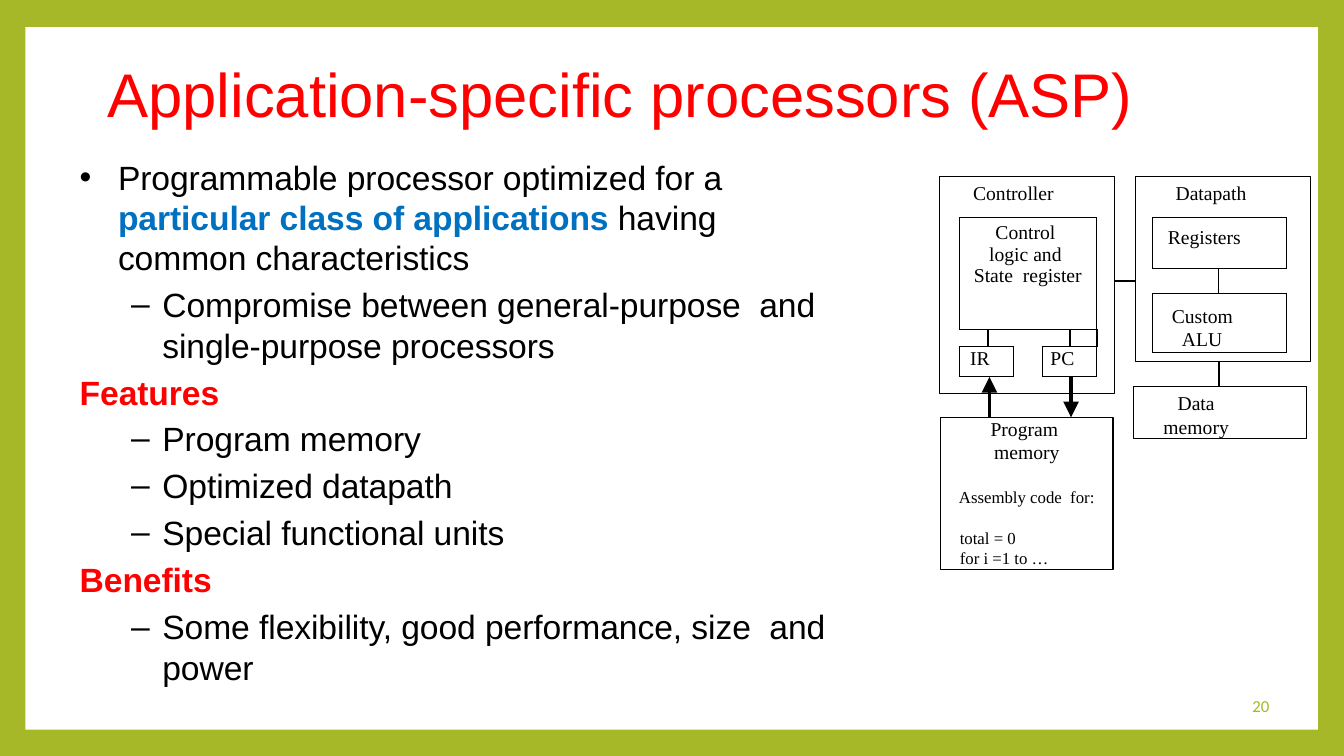
from dataclasses import dataclass

from lxml import etree
from pptx import Presentation
from pptx.dml.color import RGBColor
from pptx.enum.shapes import MSO_CONNECTOR, MSO_SHAPE
from pptx.enum.text import MSO_ANCHOR, PP_ALIGN
from pptx.oxml.ns import qn
from pptx.util import Inches, Pt

RECTANGLE = MSO_SHAPE.RECTANGLE
STRAIGHT = MSO_CONNECTOR.STRAIGHT
TOP, MIDDLE = MSO_ANCHOR.TOP, MSO_ANCHOR.MIDDLE
LEFT, CENTER, RIGHT = PP_ALIGN.LEFT, PP_ALIGN.CENTER, PP_ALIGN.RIGHT
SLIDE_WIDTH, SLIDE_HEIGHT = Inches(13.33), Inches(7.5)
EDGES = {"L": "a:lnL", "R": "a:lnR", "T": "a:lnT", "B": "a:lnB"}


@dataclass(frozen=True)
class Style:
    font: str
    size: float
    color: str = "000000"
    bold: bool = False
    tracking: int = -5


@dataclass(frozen=True)
class Theme:
    frame: str = "A6B727"
    panel: str = "FFFFFF"
    ink: str = "000000"
    thin: float = 0.75
    thick: float = 1.5
    arrow: float = 2.25
    title: Style = Style("Arial", 44, "FF0000")
    body: Style = Style("Arial", 24)
    emphasis: Style = Style("Arial", 24, "0070C0", True)
    heading: Style = Style("Arial", 24, "FF0000", True)
    diagram: Style = Style("Times New Roman", 14, tracking=0)
    code: Style = Style("Times New Roman", 12, tracking=0)
    wiring: Style = Style("Times New Roman", 6)
    number: Style = Style("Calibri", 12, "A6B727")


THEME = Theme()


@dataclass(frozen=True)
class Line:
    runs: tuple
    indent: float = 0
    first: float = 0
    before: float = 0
    spacing: object = None
    align: object = LEFT
    bullet: str = ""


@dataclass(frozen=True)
class Cell:
    start: int
    end: int
    edges: str
    line: object = None
    inset: float = 0
    upright: float = THEME.thin


def across(share):
    return round(SLIDE_WIDTH * share / 100)


def down(share):
    return round(SLIDE_HEIGHT * share / 100)


def place(left, top, width, height):
    return across(left), down(top), across(width), down(height)


def plain(text, style, **options):
    return Line(((text, style),), **options)


def add_run(paragraph, text, style):
    run = paragraph.add_run()
    run.text = text
    run.font.name = style.font
    run.font.size = Pt(style.size)
    run.font.bold = style.bold
    run.font.color.rgb = RGBColor.from_string(style.color)
    run.font._element.set("spc", str(style.tracking))


def write_paragraph(paragraph, line):
    paragraph.alignment = line.align
    paragraph.space_before = Pt(line.before)
    if line.spacing:
        paragraph.line_spacing = line.spacing
    properties = paragraph._p.get_or_add_pPr()
    properties.set("marL", str(across(line.indent)))
    properties.set("indent", str(across(line.first)))
    if line.bullet:
        etree.SubElement(properties, qn("a:buFont"), typeface="Arial")
        etree.SubElement(properties, qn("a:buChar"), char=line.bullet)
    for text, style in line.runs:
        for index, part in enumerate(text.split("\n")):
            if index:
                paragraph.add_line_break()
            add_run(paragraph, part, style)


def write_frame(frame, lines, anchor=TOP, inset=0):
    frame.word_wrap = True
    frame.vertical_anchor = anchor
    frame.margin_left = frame.margin_right = frame.margin_bottom = 0
    frame.margin_top = down(inset)
    for index, line in enumerate(lines):
        paragraph = frame.add_paragraph() if index else frame.paragraphs[0]
        write_paragraph(paragraph, line)


def add_text(slide, box, lines, anchor=TOP, inset=0.18):
    write_frame(slide.shapes.add_textbox(*place(*box)).text_frame, lines, anchor, inset)


def add_box(slide, box, lines=(), inset=0, fill=None):
    shape = slide.shapes.add_shape(RECTANGLE, *place(*box))
    shape.shadow.inherit = False
    if fill:
        shape.fill.solid()
        shape.fill.fore_color.rgb = RGBColor.from_string(fill)
        shape.line.fill.background()
    else:
        shape.fill.background()
        shape.line.color.rgb = RGBColor.from_string(THEME.ink)
        shape.line.width = Pt(THEME.thin)
    write_frame(shape.text_frame, lines, TOP, inset)


def add_link(slide, start, end, width, arrow=False):
    connector = slide.shapes.add_connector(
        STRAIGHT, across(start[0]), down(start[1]), across(end[0]), down(end[1]))
    connector.line.color.rgb = RGBColor.from_string(THEME.ink)
    connector.line.width = Pt(width)
    if arrow:
        outline = connector.line._get_or_add_ln()
        etree.SubElement(outline, qn("a:tailEnd"), type="triangle", w="lg", len="lg")
    etree.SubElement(connector._element.spPr, qn("a:effectLst"))


def style_cell(cell, edges, upright):
    properties = cell._tc.get_or_add_tcPr()
    for edge, tag in EDGES.items():
        width = upright if edge in "LR" else THEME.thin
        border = etree.SubElement(properties, qn(tag), w=str(Pt(width)))
        if edge in edges:
            fill = etree.SubElement(border, qn("a:solidFill"))
            etree.SubElement(fill, qn("a:srgbClr"), val=THEME.ink)
        else:
            etree.SubElement(border, qn("a:noFill"))
    cell.fill.background()
    cell.margin_left = cell.margin_right = cell.margin_top = cell.margin_bottom = 0


def add_unit_table(slide, corner, columns, rows, cells):
    box = place(*corner, sum(columns), sum(rows))
    table = slide.shapes.add_table(len(rows), len(columns), *box).table
    table.first_row = table.horz_banding = False
    for column, share in zip(table.columns, columns):
        column.width = across(share)
    for row, share in zip(table.rows, rows):
        row.height = down(share)
    for row, row_cells in enumerate(cells):
        for item in row_cells:
            for column in range(item.start, item.end + 1):
                cell = table.cell(row, column)
                style_cell(cell, item.edges, item.upright)
                ending = etree.SubElement(cell.text_frame.paragraphs[0]._p, qn("a:endParaRPr"))
                ending.set("sz", str(THEME.wiring.size * 100))
            cell = table.cell(row, item.start)
            if item.end > item.start:
                cell.merge(table.cell(row, item.end))
            if item.line:
                cell.margin_top = down(item.inset)
                write_paragraph(cell.text_frame.paragraphs[0], item.line)


def add_body(slide):
    def point(text, before=4.8):
        return plain(text, THEME.body, indent=6.23, first=-2.33, before=before, bullet="–")

    def heading(text):
        return plain(text, THEME.heading, indent=0.08, before=4.8)

    opening = Line((("Programmable processor optimized for a ", THEME.body),
                    ("particular class of applications ", THEME.emphasis),
                    ("having common characteristics", THEME.body)),
                   indent=2.93, first=-2.85, bullet="•")
    add_text(slide, (5.85, 20.53, 56.26, 71.33), [
        opening,
        point("Compromise between general-purpose  and single-purpose processors"),
        heading("Features"),
        point("Program memory", 4.5),
        point("Optimized datapath"),
        point("Special functional units"),
        heading("Benefits"),
        point("Some flexibility, good performance, size  and power"),
    ])


def add_controller(slide):
    diagram, code, thick = THEME.diagram, THEME.code, THEME.thick
    add_box(slide, (69.92, 23.33, 12.98, 28.67))
    add_text(slide, (72.4, 23.73, 8.25, 3.33), [plain("Controller", diagram)])
    control = plain("Control \nlogic and \nState  register", diagram, align=CENTER, spacing=0.99)
    instruction = plain("IR", diagram, indent=0.83, spacing=Pt(16.5))
    counter = plain("PC", diagram, indent=0.6, spacing=Pt(16.5))
    add_unit_table(slide, (71.36, 28.8), (2.15, 1.9, 2.15, 2.05, 2), (14.8, 2.2, 4), [
        [Cell(0, 4, "LTRB", control, 0.67)],
        [Cell(0, 0, "TRB", upright=thick), Cell(1, 3, "LTR", upright=thick),
         Cell(4, 4, "LTRB", upright=thick)],
        [Cell(0, 1, "LTRB", instruction), Cell(2, 2, "LR"), Cell(3, 4, "LTRB", counter)],
    ])
    add_box(slide, (69.99, 55.2, 12.83, 20.13), [
        plain("Program \nmemory", diagram, align=CENTER, spacing=Pt(16.6)),
        plain("Assembly code  for:", code, align=CENTER, before=16.2),
        plain("total = 0", code, indent=1.43, before=15, spacing=Pt(14.3)),
        plain("for i =1 to …", code, indent=1.43, spacing=Pt(14.3)),
    ])
    add_link(slide, (73.62, 55.2), (73.62, 49.87), THEME.arrow, True)
    add_link(slide, (79.69, 49.87), (79.69, 55.2), THEME.arrow, True)


def add_datapath(slide):
    diagram = THEME.diagram
    add_box(slide, (84.5, 23.33, 12.98, 24.45))
    add_text(slide, (87.47, 23.73, 7.28, 3.33), [plain("Datapath", diagram)])
    registers = plain("Registers", diagram, indent=1.13)
    unit = plain("Custom \nALU", diagram, indent=2.18, first=-0.75, spacing=Pt(16.6))
    add_unit_table(slide, (85.76, 28.8), (4.88, 5.1), (6.67, 3.33, 7.8), [
        [Cell(0, 1, "LTRB", registers, 1.25)],
        [Cell(0, 0, "TRB"), Cell(1, 1, "LTB")],
        [Cell(0, 1, "LTRB", unit, 1.47)],
    ])
    add_box(slide, (84.32, 51.07, 12.9, 6.93),
            [plain("Data \nmemory", diagram, indent=2.25, first=1.05)], 0.67)
    add_link(slide, (82.97, 37.2), (84.47, 37.2), THEME.thick)
    add_link(slide, (90.7, 47.73), (90.7, 51.2), THEME.thick)


def main():
    presentation = Presentation()
    presentation.slide_width, presentation.slide_height = SLIDE_WIDTH, SLIDE_HEIGHT
    slide = presentation.slides.add_slide(presentation.slide_layouts[6])
    slide.background.fill.solid()
    slide.background.fill.fore_color.rgb = RGBColor.from_string(THEME.frame)
    add_box(slide, (1.88, 3.6, 96.17, 92.93), fill=THEME.panel)
    title = plain("Application-specific processors (ASP)", THEME.title, indent=0.12)
    add_text(slide, (7.88, 7.07, 84.17, 10.13), [title], MIDDLE)
    add_body(slide)
    add_controller(slide)
    add_datapath(slide)
    number = plain("20", THEME.number, align=RIGHT, spacing=Pt(16.4))
    add_text(slide, (91.45, 91.73, 3, 2.93), [number], MIDDLE, 0)
    presentation.save("out.pptx")


if __name__ == "__main__":
    main()
